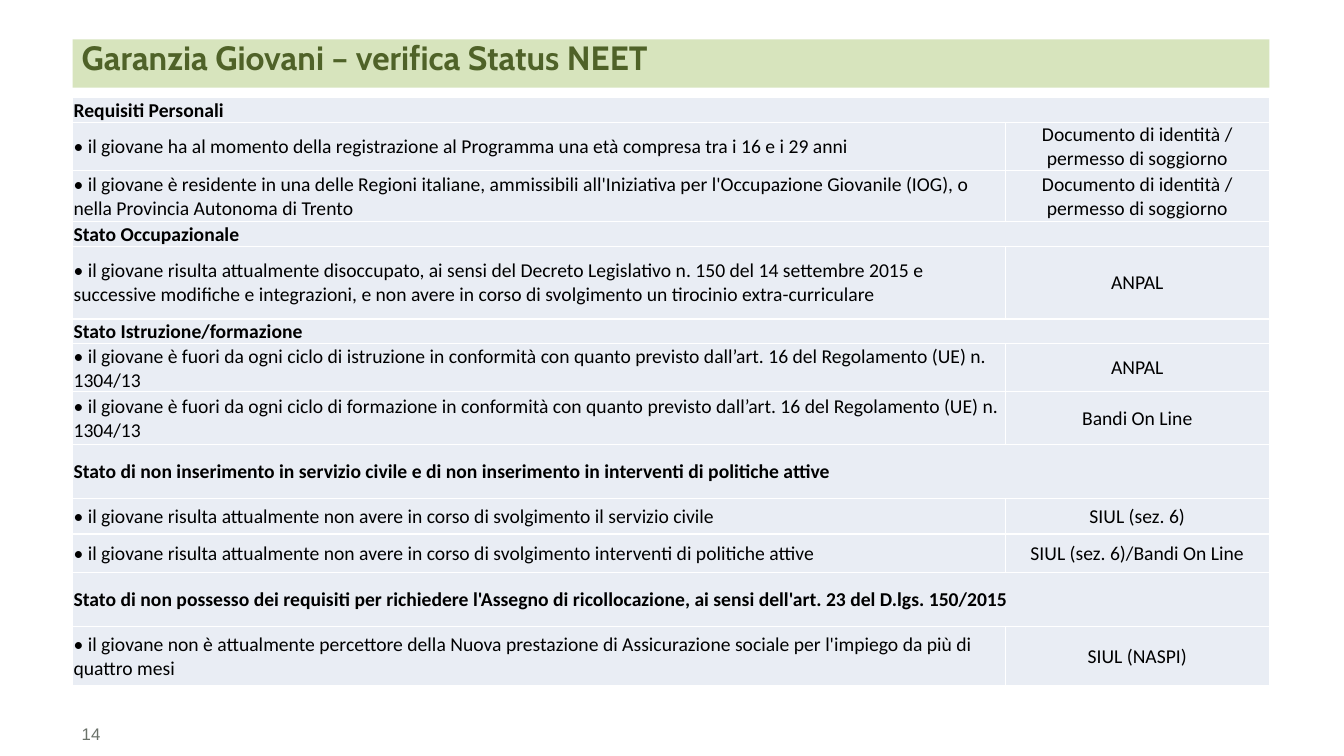
from dataclasses import dataclass

from lxml import etree
from pptx import Presentation
from pptx.dml.color import RGBColor
from pptx.enum.shapes import MSO_SHAPE
from pptx.enum.text import MSO_ANCHOR, PP_ALIGN
from pptx.oxml.ns import qn
from pptx.util import Inches, Pt

RECTANGLE = MSO_SHAPE.RECTANGLE
MIDDLE = MSO_ANCHOR.MIDDLE
LEFT, CENTER, JUSTIFY = PP_ALIGN.LEFT, PP_ALIGN.CENTER, PP_ALIGN.JUSTIFY

TITLE = "Garanzia Giovani – verifica Status NEET"
PAGE_NUMBER = "14"
IDENTITY = "Documento di identità / permesso di soggiorno"

SECTIONS = [
    ("Requisiti Personali", 0.23, [
        ("il giovane ha al momento della registrazione al Programma una età compresa tra i 16 e i 29 anni",
         IDENTITY, 0.46),
        ("il giovane è residente in una delle Regioni italiane, ammissibili all'Iniziativa per "
         "l'Occupazione Giovanile (IOG), o nella Provincia Autonoma di Trento", IDENTITY, 0.51),
    ]),
    ("Stato Occupazionale", 0.23, [
        ("il giovane risulta attualmente disoccupato, ai sensi del Decreto Legislativo n. 150 del "
         "14 settembre 2015 e successive modifiche e integrazioni, e non avere in corso di "
         "svolgimento un tirocinio extra-curriculare", "ANPAL", 0.72),
    ]),
    ("Stato Istruzione/formazione", 0.23, [
        ("il giovane è fuori da ogni ciclo di istruzione in conformità con quanto previsto "
         "dall’art. 16 del Regolamento (UE) n. 1304/13", "ANPAL", 0.48),
        ("il giovane è fuori da ogni ciclo di formazione in conformità con quanto previsto "
         "dall’art. 16 del Regolamento (UE) n. 1304/13", "Bandi On Line", 0.52),
    ]),
    ("Stato di non inserimento in servizio civile e di non inserimento in interventi di politiche attive", 0.54, [
        ("il giovane risulta attualmente non avere in corso di svolgimento il servizio civile",
         "SIUL (sez. 6)", 0.35),
        ("il giovane risulta attualmente non avere in corso di svolgimento interventi di politiche attive",
         "SIUL (sez. 6)/Bandi On Line", 0.38),
    ]),
    ("Stato di non possesso dei requisiti per richiedere l'Assegno di ricollocazione, ai sensi "
     "dell'art. 23 del D.lgs. 150/2015", 0.54, [
        ("il giovane non è attualmente percettore della Nuova prestazione di Assicurazione sociale "
         "per l'impiego da più di quattro mesi", "SIUL (NASPI)", 0.58),
    ]),
]


@dataclass(frozen=True)
class Theme:
    band: str = "D7E4BD"
    title: str = "4F6228"
    cell: str = "E9EDF4"
    border: str = "FFFFFF"
    body: str = "000000"
    number: str = "6A7169"
    title_font: str = "Cabin"
    body_font: str = "Calibri"
    number_font: str = "Arial"
    title_size: int = 24
    body_size: int = 14
    number_size: int = 12


THEME = Theme()
SLIDE_WIDTH, SLIDE_HEIGHT = 13.33, 7.5
MARGIN = 0.72
COLUMNS = (9.25, 2.62)
CONTENT_WIDTH = sum(COLUMNS)
TITLE_TOP, TITLE_HEIGHT = 0.39, 0.48
TABLE_TOP = 0.97
NUMBER_TOP, NUMBER_WIDTH, NUMBER_HEIGHT = 7.08, 0.68, 0.4


def write(frame, text, font_name, size, color, bold=False, align=LEFT):
    paragraph = frame.paragraphs[0]
    paragraph.alignment = align
    run = paragraph.add_run()
    run.text = text
    run.font.name = font_name
    run.font.size = Pt(size)
    run.font.bold = bold
    run.font.color.rgb = RGBColor.from_string(color)
    return paragraph


def set_frame(frame):
    frame.word_wrap = True
    frame.vertical_anchor = MIDDLE
    frame.margin_left = frame.margin_right = Inches(0.09)
    frame.margin_top = frame.margin_bottom = Inches(0.04)


def add_title(slide):
    band = slide.shapes.add_shape(RECTANGLE, Inches(MARGIN), Inches(TITLE_TOP),
                                  Inches(CONTENT_WIDTH), Inches(TITLE_HEIGHT))
    band.shadow.inherit = False
    band.fill.solid()
    band.fill.fore_color.rgb = RGBColor.from_string(THEME.band)
    band.line.fill.background()
    set_frame(band.text_frame)
    heading = write(band.text_frame, TITLE, THEME.title_font, THEME.title_size,
                    THEME.title, bold=True, align=JUSTIFY)
    heading.line_spacing = Pt(19)


def style_cell(cell):
    cell.vertical_anchor = MIDDLE
    cell.margin_left = cell.margin_right = cell.margin_top = Inches(0.01)
    cell.margin_bottom = 0
    properties = cell._tc.get_or_add_tcPr()
    for side in ("a:lnL", "a:lnR", "a:lnT", "a:lnB"):
        border = etree.SubElement(properties, qn(side), w=str(Pt(1)))
        fill = etree.SubElement(border, qn("a:solidFill"))
        etree.SubElement(fill, qn("a:srgbClr"), val=THEME.border)
    cell.fill.solid()
    cell.fill.fore_color.rgb = RGBColor.from_string(THEME.cell)


def add_requirements(slide):
    rows = []
    for section, height, requirements in SECTIONS:
        rows.append((section, None, height))
        rows += [(f"• {requirement}", source, size) for requirement, source, size in requirements]
    table_height = sum(height for _, _, height in rows)
    table = slide.shapes.add_table(len(rows), len(COLUMNS), Inches(MARGIN), Inches(TABLE_TOP),
                                   Inches(CONTENT_WIDTH), Inches(table_height)).table
    table.first_row = table.horz_banding = False
    for column, width in zip(table.columns, COLUMNS):
        column.width = Inches(width)
    for row, (label, source, height) in zip(table.rows, rows):
        row.height = Inches(height)
        label_cell, source_cell = row.cells
        style_cell(label_cell)
        style_cell(source_cell)
        is_section = source is None
        write(label_cell.text_frame, label, THEME.body_font, THEME.body_size, THEME.body, bold=is_section)
        if is_section:
            label_cell.merge(source_cell)
        else:
            write(source_cell.text_frame, source, THEME.body_font, THEME.body_size,
                  THEME.body, align=CENTER)


def add_page_number(slide):
    number = slide.shapes.add_textbox(Inches(MARGIN), Inches(NUMBER_TOP),
                                      Inches(NUMBER_WIDTH), Inches(NUMBER_HEIGHT))
    set_frame(number.text_frame)
    write(number.text_frame, PAGE_NUMBER, THEME.number_font, THEME.number_size, THEME.number)


def main():
    deck = Presentation()
    deck.slide_width, deck.slide_height = Inches(SLIDE_WIDTH), Inches(SLIDE_HEIGHT)
    slide = deck.slides.add_slide(deck.slide_layouts[6])
    add_title(slide)
    add_page_number(slide)
    add_requirements(slide)
    deck.save("out.pptx")


if __name__ == "__main__":
    main()
